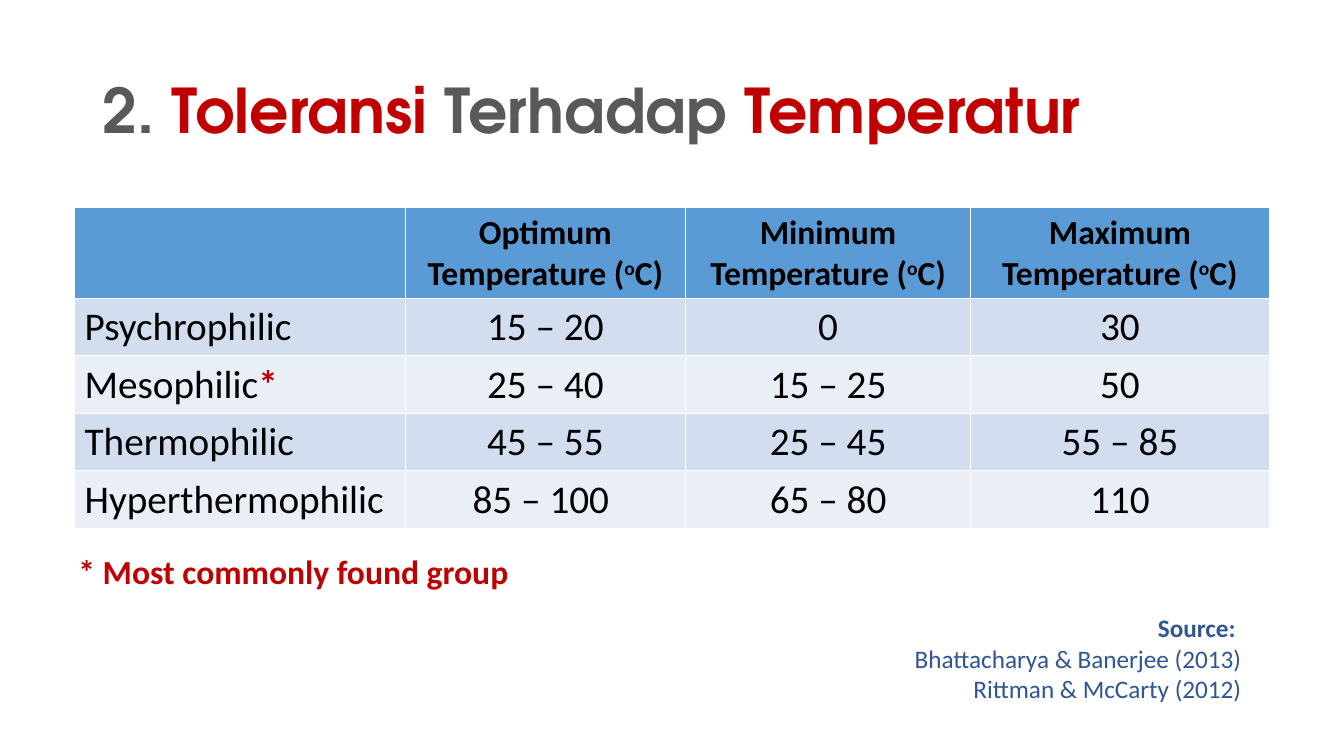
import pptx
import pptx.util
import pptx.dml.color
import pptx.enum.text

HUES = {
    "grey": "595959", "red": "C00000", "black": "000000", "navy": "2F5597",
    "head": "5B9BD5", "dark": "D2DEEF", "light": "EAEFF7",
}
ALIGN = pptx.enum.text.PP_ALIGN
ANCHOR = pptx.enum.text.MSO_ANCHOR
FIT = pptx.enum.text.MSO_AUTO_SIZE

deck = pptx.Presentation()
deck.slide_width = pptx.util.Inches(13.33)
deck.slide_height = pptx.util.Inches(7.5)
slide = deck.slides.add_slide(deck.slide_layouts[6])

# The grid has 100 columns and 100 rows
COL = deck.slide_width / 100
ROW = deck.slide_height / 100


def add_box(left, top, width, height):
    """Add a text box, placed in grid columns and rows."""
    box = slide.shapes.add_textbox(
        int(left * COL), int(top * ROW), int(width * COL), int(height * ROW))
    return box.text_frame


def add_run(para, text, size, hue, bold=False, face="Calibri"):
    run = para.add_run()
    run.text = text
    run.font.size = pptx.util.Pt(size)
    run.font.name = face
    run.font.bold = bold
    run.font.color.rgb = pptx.dml.color.RGBColor.from_string(HUES[hue])
    return run


# Title
title = add_box(6.9, 5.33, 86.25, 19.33)
title.word_wrap = True
title.vertical_anchor = ANCHOR.MIDDLE
para = title.paragraphs[0]
para.line_spacing = 0.9
for text, hue in [("2. ", "grey"), ("Toleransi ", "red"),
                  ("Terhadap ", "grey"), ("Temperatur", "red")]:
    add_run(para, text, 44, hue, True, "TeX Gyre Adventor")

# Table
HEADS = ["", "Optimum", "Minimum", "Maximum"]
GROUPS = [
    ["Psychrophilic", "15 – 20", "0", "30"],
    ["Mesophilic", "25 – 40", "15 – 25", "50"],
    ["Thermophilic", "45 – 55", "25 – 45", "55 – 85"],
    ["Hyperthermophilic", "85 – 100 ", "65 – 80", "110"],
]
WIDTHS = [24.6, 20.85, 21.23, 22.2]
HEIGHTS = [11.87] + [7.6] * len(GROUPS)

table = slide.shapes.add_table(
    len(HEIGHTS), len(WIDTHS), int(5.55 * COL), int(27.47 * ROW),
    int(sum(WIDTHS) * COL), int(sum(HEIGHTS) * ROW)).table
for col, width in zip(table.columns, WIDTHS):
    col.width = int(width * COL)
for row, height in zip(table.rows, HEIGHTS):
    row.height = int(height * ROW)

for r, texts in enumerate([HEADS] + GROUPS):
    band = "head" if r == 0 else "dark" if r % 2 else "light"
    for c, text in enumerate(texts):
        cell = table.cell(r, c)
        cell.fill.solid()
        cell.fill.fore_color.rgb = pptx.dml.color.RGBColor.from_string(HUES[band])
        para = cell.text_frame.paragraphs[0]
        if c > 0:
            para.alignment = ALIGN.CENTER
        if r > 0:
            add_run(para, text, 28, "black")
        elif text:
            add_run(para, text + " Temperature (", 24, "black", True)
            degree = add_run(para, "o", 24, "black", True)
            degree._r.get_or_add_rPr().set("baseline", "30000")
            add_run(para, "C)", 24, "black", True)
        if text == "Mesophilic":
            add_run(para, "*", 28, "red", True)

# Footnote
note = add_box(5.1, 72.27, 33.83, 6.67)
note.word_wrap = False
note.auto_size = FIT.SHAPE_TO_FIT_TEXT
add_run(note.paragraphs[0], "* Most commonly found group", 24, "red", True)

# Sources
credit = add_box(67, 80.4, 26.1, 13.47)
credit.word_wrap = False
credit.auto_size = FIT.SHAPE_TO_FIT_TEXT
for i, text in enumerate(["Source: ", "Bhattacharya & Banerjee (2013)",
                          "Rittman & McCarty (2012)"]):
    para = credit.add_paragraph() if i else credit.paragraphs[0]
    para.alignment = ALIGN.RIGHT
    add_run(para, text, 18, "navy", i == 0)

deck.save("out.pptx")
